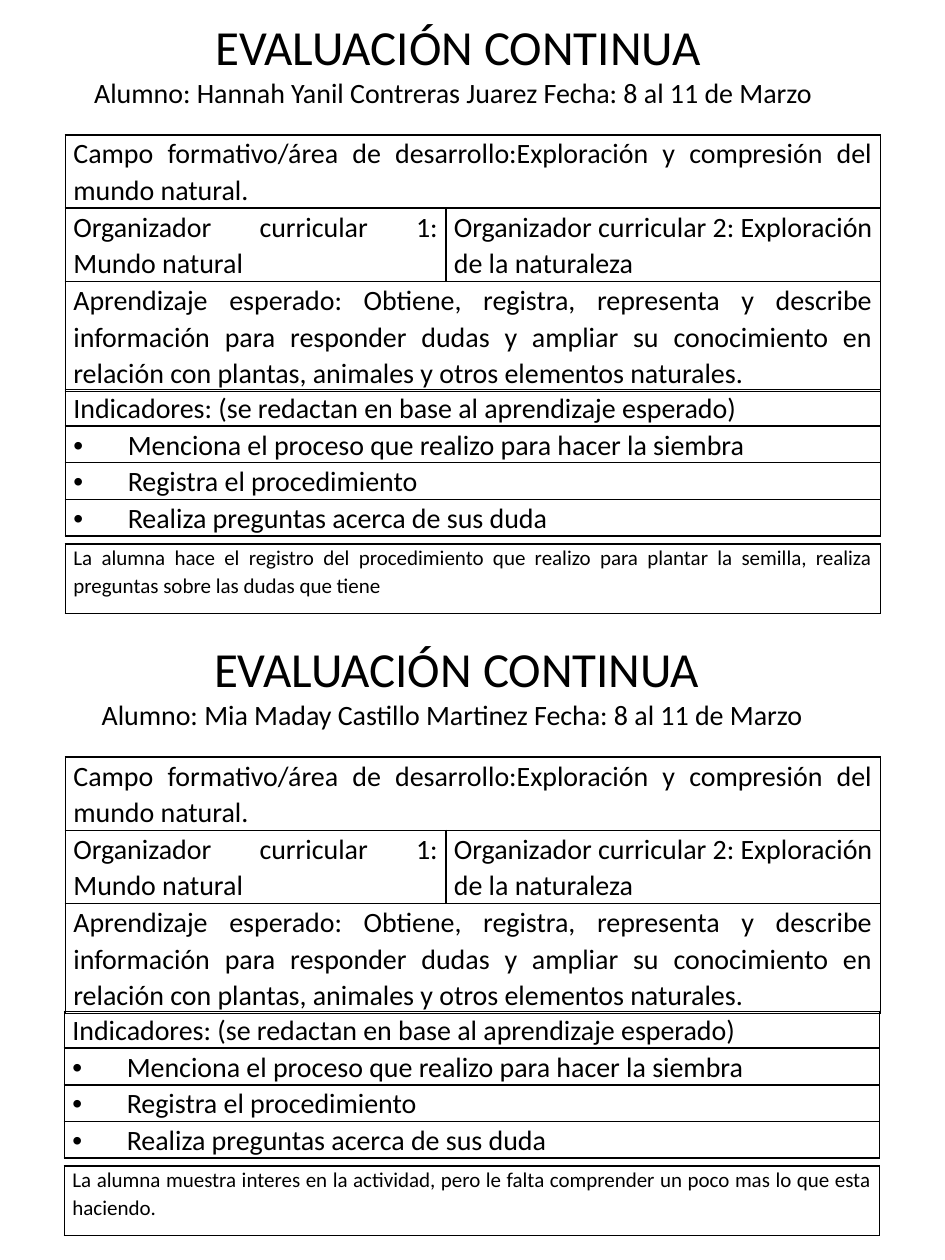
from lxml.etree import SubElement
from pptx import Presentation
from pptx.dml.color import RGBColor
from pptx.enum.text import MSO_ANCHOR, MSO_AUTO_SIZE, PP_ALIGN
from pptx.oxml.ns import qn
from pptx.util import Cm, Pt

BLACK = "000000"
TABLE_WIDTH = 16.43
BLOCK_STEP = 12.54
FIELD = "Campo formativo/área de desarrollo:Exploración y compresión del mundo natural. "
ORGANIZERS = [
    "Organizador curricular 1: Mundo natural",
    "Organizador curricular 2: Exploración de la naturaleza",
]
LEARNING = (
    "Aprendizaje esperado: Obtiene, registra, representa y describe información "
    "para responder dudas y ampliar su conocimiento en relación con plantas, "
    "animales y otros elementos naturales. "
)
INDICATORS_TITLE = "Indicadores: (se redactan en base al aprendizaje esperado)"
INDICATORS = [
    " Menciona el proceso que realizo para hacer la siembra",
    " Registra el procedimiento",
    " Realiza preguntas acerca de sus duda",
]
EVALUATIONS = [
    {
        "student": "Hannah Yanil Contreras Juarez",
        "heading_left": 1.65,
        "heading_width": 15.16,
        "left": 1.32,
        "note": "La alumna hace el registro del procedimiento que realizo para "
                "plantar la semilla, realiza preguntas sobre las dudas que tiene",
    },
    {
        "student": "Mia Maday Castillo Martinez",
        "heading_left": 1.8,
        "heading_width": 14.81,
        "left": 1.3,
        "note": "La alumna muestra interes en la actividad, pero le falta "
                "comprender un poco mas lo que esta haciendo.",
    },
]


def color(value):
    return RGBColor.from_string(value)


def write(paragraph, text, size=16, align=PP_ALIGN.JUSTIFY, spacing=None, bullet=False):
    paragraph.alignment = align
    paragraph.line_spacing = spacing
    run = paragraph.add_run()
    run.text = text
    run.font.name = "Calibri"
    run.font.size = Pt(size)
    run.font.color.rgb = color(BLACK)
    if bullet:
        properties = paragraph._p.get_or_add_pPr()
        properties.set("marL", str(Cm(0.97)))
        properties.set("indent", str(-Cm(0.97)))
        SubElement(properties, qn("a:buFont"), typeface="Arial")
        SubElement(properties, qn("a:buChar"), char="•")


def add_borders(cell):
    properties = cell._tc.get_or_add_tcPr()
    for position, side in enumerate(("lnL", "lnR", "lnT", "lnB")):
        line = SubElement(properties, qn(f"a:{side}"), w=str(Pt(1)))
        fill = SubElement(line, qn("a:solidFill"))
        SubElement(fill, qn("a:srgbClr"), val=BLACK)
        properties.remove(line)
        properties.insert(position, line)


def add_grid(slide, left, top, widths, heights):
    frame = slide.shapes.add_table(
        len(heights), len(widths), Cm(left), Cm(top), Cm(sum(widths)), Cm(sum(heights))
    )
    table = frame.table
    table.first_row = False
    table.horz_banding = False
    for column, width in zip(table.columns, widths):
        column.width = Cm(width)
    for row, height in zip(table.rows, heights):
        row.height = Cm(height)
    for cell in table.iter_cells():
        cell.fill.background()
        cell.margin_left = cell.margin_right = Cm(0.16)
        cell.margin_top = cell.margin_bottom = 0
        add_borders(cell)
    return table


def write_cell(cell, text, **formatting):
    write(cell.text_frame.paragraphs[0], text, spacing=1.07, **formatting)


def add_heading(slide, left, top, width, student):
    frame = slide.shapes.add_textbox(Cm(left), Cm(top), Cm(width), Cm(2.9)).text_frame
    frame.word_wrap = False
    frame.auto_size = MSO_AUTO_SIZE.NONE
    frame.vertical_anchor = MSO_ANCHOR.MIDDLE
    frame.margin_bottom = Cm(0.9)
    write(frame.paragraphs[0], "EVALUACIÓN CONTINUA", size=28, align=PP_ALIGN.CENTER)
    write(
        frame.add_paragraph(),
        f"Alumno: {student} Fecha: 8 al 11 de Marzo",
        align=PP_ALIGN.LEFT,
    )


def add_curriculum(slide, left, top):
    table = add_grid(slide, left, top, [7.67, 8.76], [1.4, 1.4, 2.13])
    for row, text in ((0, FIELD), (2, LEARNING)):
        table.cell(row, 0).merge(table.cell(row, 1))
        write_cell(table.cell(row, 0), text)
    for column, text in enumerate(ORGANIZERS):
        write_cell(table.cell(1, column), text)


def add_indicators(slide, left, top):
    table = add_grid(slide, left, top, [TABLE_WIDTH], [0.69] * 4)
    write_cell(table.cell(0, 0), INDICATORS_TITLE)
    for row, text in enumerate(INDICATORS, start=1):
        write_cell(table.cell(row, 0), text, bullet=True)


def add_note(slide, left, top, text):
    table = add_grid(slide, left, top, [TABLE_WIDTH], [1.4])
    write_cell(table.cell(0, 0), text, size=12)


def add_evaluation(slide, top, evaluation):
    left = evaluation["left"]
    add_indicators(slide, left, top + 7.85)
    add_note(slide, left, top + 10.97, evaluation["note"])
    add_heading(
        slide,
        evaluation["heading_left"],
        top + 0.2,
        evaluation["heading_width"],
        evaluation["student"],
    )
    add_curriculum(slide, 1.32, top + 2.72)


def main():
    presentation = Presentation()
    presentation.slide_width = Cm(19.05)
    presentation.slide_height = Cm(25.4)
    slide = presentation.slides.add_slide(presentation.slide_layouts[6])
    for index, evaluation in enumerate(EVALUATIONS):
        add_evaluation(slide, index * BLOCK_STEP, evaluation)
    presentation.save("out.pptx")


if __name__ == "__main__":
    main()
